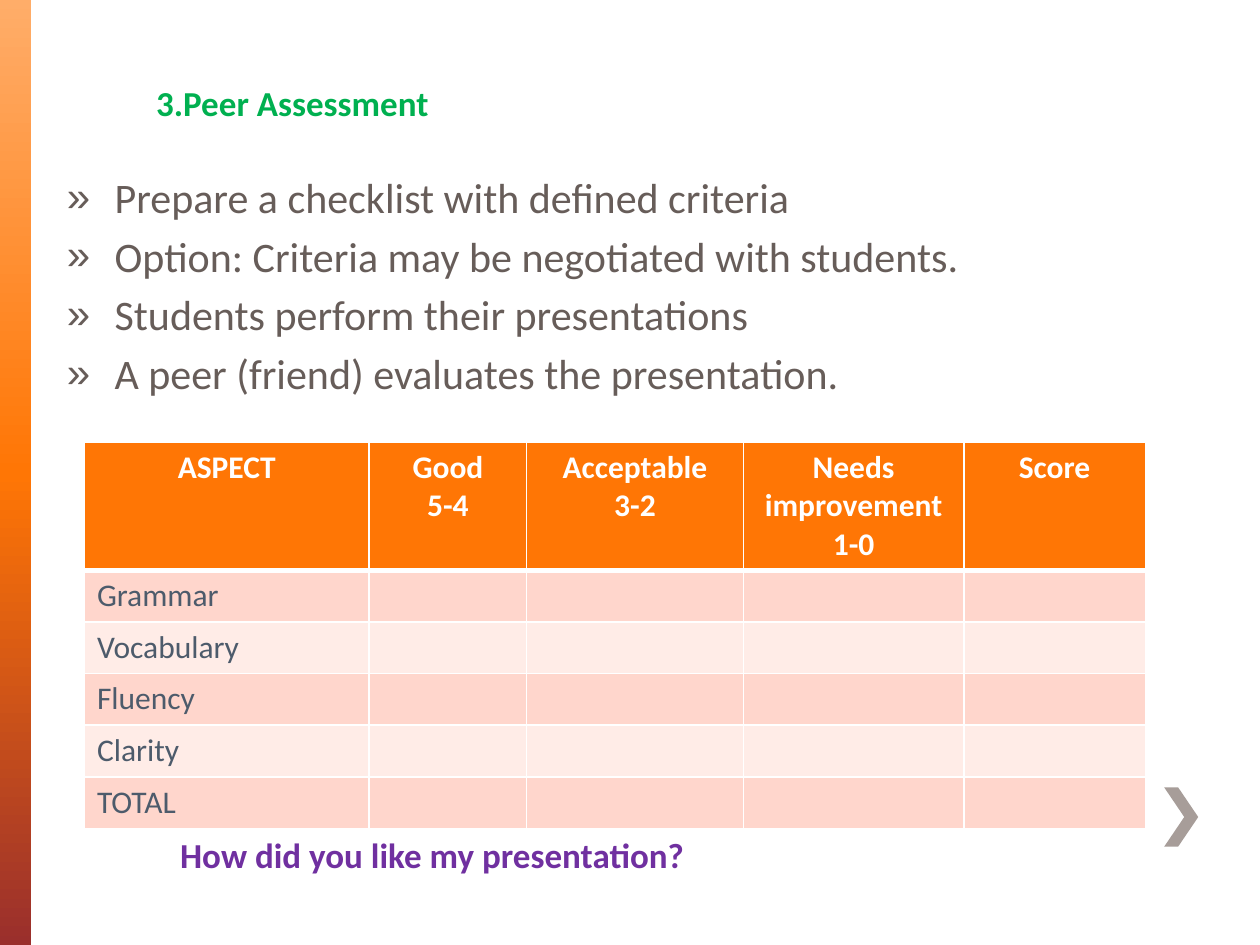
from dataclasses import dataclass
from copy import deepcopy

from lxml.etree import SubElement
from pptx import Presentation
from pptx.dml.color import RGBColor
from pptx.enum.shapes import MSO_SHAPE
from pptx.enum.text import MSO_ANCHOR, MSO_AUTO_SIZE, PP_ALIGN
from pptx.oxml.ns import qn
from pptx.util import Inches, Pt

SLIDE_WIDTH, SLIDE_HEIGHT = Inches(10), Inches(7.5)
FONT = "Calibri"
COLORS = {
    "white": "FFFFFF", "light_orange": "FFAD69", "orange": "FF7605",
    "red": "9A2F2C", "gray": "A79D99", "body": "675D59", "purple": "7030A0",
    "green": "00B050", "cell": "4D5B6B", "band_dark": "FFD6CC",
    "band_light": "FFECE7",
}


@dataclass(frozen=True)
class Box:
    """A region in percent of the slide's width and height."""
    left: float
    top: float
    width: float
    height: float

    def lengths(self) -> tuple[int, int, int, int]:
        return (int(SLIDE_WIDTH * self.left / 100), int(SLIDE_HEIGHT * self.top / 100),
                int(SLIDE_WIDTH * self.width / 100), int(SLIDE_HEIGHT * self.height / 100))


@dataclass(frozen=True)
class Column:
    header: str
    width: float  # inches


SIDEBAR = Box(0, 0, 2.5, 100)
CHEVRON = Box(92.4, 83.33, 2.7, 6.27)
HEADING = Box(11.4, 8, 40.9, 5.87)
BULLETS = Box(4.3, 17.47, 85, 28.4)
TABLE = Box(6.7, 46.8, 84.2, 38.27)
QUESTION = Box(13.3, 88.27, 79.2, 5.07)

CRITERIA = [
    "Prepare a checklist with defined criteria",
    "Option: Criteria may be negotiated with students.",
    "Students perform their presentations",
    "A peer (friend) evaluates the presentation.",
]
COLUMNS = [
    Column("ASPECT", 2.26), Column("Good\n5-4", 1.25),
    Column("Acceptable\n3-2", 1.72), Column("Needs improvement\n1-0", 1.75),
    Column("Score", 1.44),
]
ASPECTS = ["Grammar", "Vocabulary", "Fluency", "Clarity", "TOTAL"]
ROW_HEIGHT = 0.41


def rgb(name: str) -> RGBColor:
    return RGBColor.from_string(COLORS[name])


def write_text(frame, text: str, *, size: float, color: str, bold: bool = False,
               align=PP_ALIGN.LEFT) -> None:
    frame.text = text
    for paragraph in frame.paragraphs:
        paragraph.alignment = align
        for run in paragraph.runs:
            run.font.name, run.font.size, run.font.bold = FONT, Pt(size), bold
            run.font.color.rgb = rgb(color)


def place(shape, box: Box) -> None:
    shape.left, shape.top, shape.width, shape.height = box.lengths()


def add_plain_shape(slide, kind, box: Box):
    shape = slide.shapes.add_shape(kind, *box.lengths())
    shape.shadow.inherit = False
    shape.line.fill.background()
    return shape


def set_gradient(shape, colors: list[str]) -> None:
    """Fill from top to bottom with evenly spaced colors."""
    shape.fill.gradient()
    shape.fill.gradient_angle = 270
    first, last = shape.fill.gradient_stops
    stop_list = shape.fill._fill._gradFill.gsLst
    for _ in colors[2:]:
        stop_list.insert(1, deepcopy(stop_list[0]))
    for index, (stop, color) in enumerate(zip(shape.fill.gradient_stops, colors)):
        stop.position = index / (len(colors) - 1)
        stop.color.rgb = rgb(color)


def set_bullet(paragraph, character: str, indent: float) -> None:
    properties = paragraph._p.get_or_add_pPr()
    properties.set("marL", str(Inches(indent)))
    properties.set("indent", str(-Inches(indent)))
    spacing = SubElement(SubElement(properties, qn("a:spcBef")), qn("a:spcPct"))
    spacing.set("val", "20000")
    SubElement(properties, qn("a:buChar")).set("char", character)


def format_cell(cell, fill: str, bottom_width: float) -> None:
    properties = cell._tc.get_or_add_tcPr()
    for side, width in (("L", 1), ("R", 1), ("T", 1), ("B", bottom_width)):
        line = SubElement(properties, qn(f"a:ln{side}"), w=str(Pt(width)))
        color = SubElement(SubElement(line, qn("a:solidFill")), qn("a:srgbClr"))
        color.set("val", COLORS["white"])
    cell.fill.solid()
    cell.fill.fore_color.rgb = rgb(fill)


def add_checklist(slide) -> None:
    table = slide.shapes.add_table(
        len(ASPECTS) + 1, len(COLUMNS), *TABLE.lengths()).table
    for row_index, row in enumerate(table.rows):
        row.height = Inches(ROW_HEIGHT * (1 if row_index else 2))
        band = "band_dark" if row_index % 2 else "band_light"
        for cell in row.cells:
            format_cell(cell, band if row_index else "orange", 1 if row_index else 3)
    for index, column in enumerate(COLUMNS):
        table.columns[index].width = Inches(column.width)
        write_text(table.cell(0, index).text_frame, column.header, size=18,
                   color="white", bold=True, align=PP_ALIGN.CENTER)
    for index, aspect in enumerate(ASPECTS, start=1):
        write_text(table.cell(index, 0).text_frame, aspect, size=18, color="cell")


def main() -> None:
    presentation = Presentation()
    presentation.slide_width, presentation.slide_height = SLIDE_WIDTH, SLIDE_HEIGHT
    slide = presentation.slides.add_slide(presentation.slide_layouts[1])

    # Side bar and chevron
    sidebar = add_plain_shape(slide, MSO_SHAPE.RECTANGLE, SIDEBAR)
    set_gradient(sidebar, ["light_orange", "orange", "red"])
    chevron = add_plain_shape(slide, MSO_SHAPE.CHEVRON, CHEVRON)
    chevron.adjustments[0] = 0.59
    chevron.fill.solid()
    chevron.fill.fore_color.rgb = rgb("gray")

    # Closing question in the title placeholder
    question = slide.shapes.title
    place(question, QUESTION)
    question.text_frame.auto_size = MSO_AUTO_SIZE.NONE
    question.text_frame.vertical_anchor = MSO_ANCHOR.BOTTOM
    write_text(question.text_frame, "How did you like my presentation?",
               size=20, color="purple", bold=True)

    # Steps in the body placeholder
    body = slide.placeholders[1]
    place(body, BULLETS)
    body.text_frame.auto_size = MSO_AUTO_SIZE.NONE
    write_text(body.text_frame, "\n".join(CRITERIA), size=24, color="body")
    for paragraph in body.text_frame.paragraphs:
        set_bullet(paragraph, "»", 0.38)

    # Checklist table and heading
    add_checklist(slide)
    heading = slide.shapes.add_textbox(*HEADING.lengths())
    heading.text_frame.word_wrap = True
    write_text(heading.text_frame, "3.Peer Assessment", size=20, color="green", bold=True)

    presentation.save("out.pptx")


if __name__ == "__main__":
    main()
